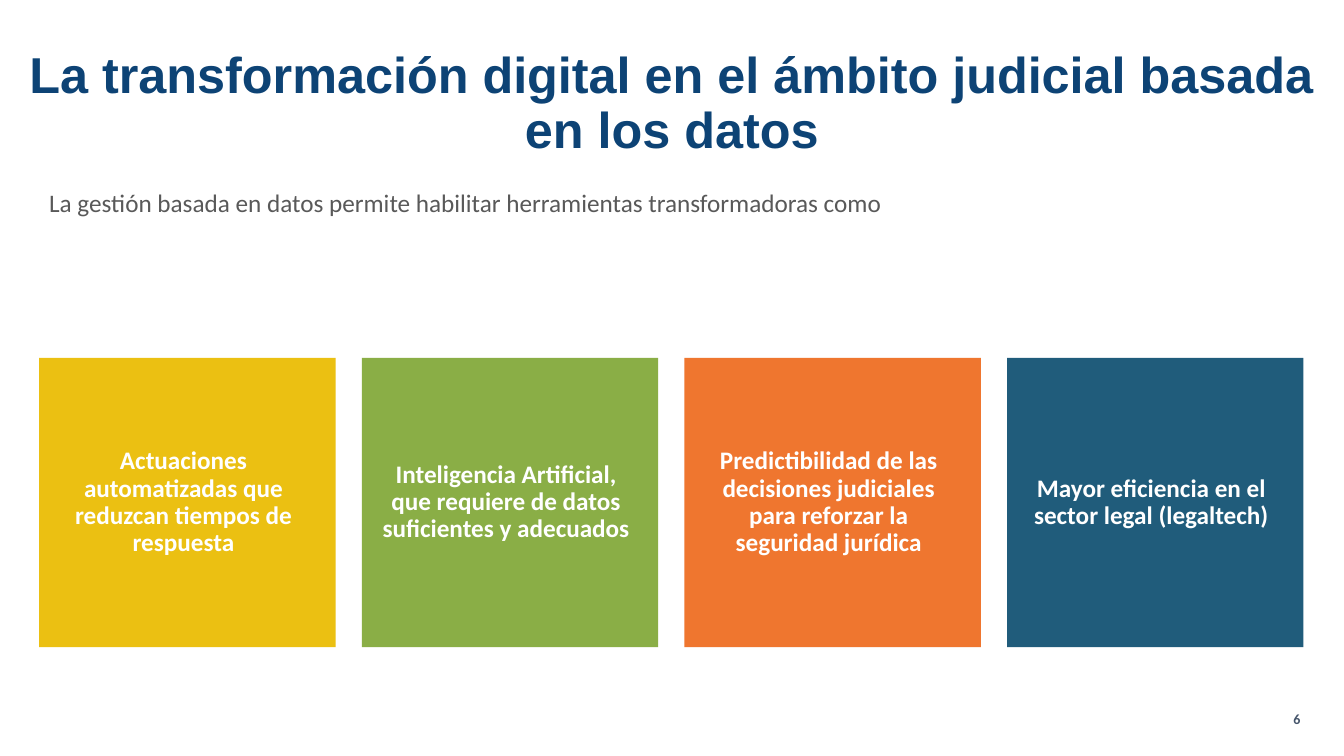
"""Build the slide on data-driven digital transformation in the courts."""
import pptx
import pptx.dml.color
import pptx.enum.shapes
import pptx.enum.text
import pptx.util

Cm = pptx.util.Cm
ALIGN = pptx.enum.text.PP_ALIGN
ANCHOR = pptx.enum.text.MSO_ANCHOR

CARD_LEFT, CARD_STEP = 0.99, 8.13
CARDS = [
    ("Actuaciones automatizadas que reduzcan tiempos de respuesta", "EBC012"),
    ("Inteligencia Artificial, que requiere de datos suficientes y adecuados", "8AAE46"),
    ("Predictibilidad de las decisiones judiciales para reforzar la seguridad jurídica", "EF762F"),
    ("Mayor eficiencia en el sector legal (legaltech)", "205C7B"),
]


def color(value):
    return pptx.dml.color.RGBColor.from_string(value)


def write(frame, text, size=18, font="Calibri", ink="FFFFFF", bold=False,
          align=ALIGN.LEFT, anchor=ANCHOR.TOP, spacing=0.9):
    frame.word_wrap = True
    frame.vertical_anchor = anchor
    paragraph = frame.paragraphs[0]
    paragraph.alignment = align
    paragraph.line_spacing = spacing
    run = paragraph.add_run()
    run.text = text
    run.font.size = pptx.util.Pt(size)
    run.font.name = font
    run.font.bold = bold
    run.font.color.rgb = color(ink)


class SlideBuilder:
    def __init__(self, slide):
        self.slide = slide
        self.card_size = (Cm(7.47), Cm(7.29))
        self.card_insets = (Cm(0.4), Cm(0.6), Cm(0.6), Cm(0.6))

    def text(self, left, top, width, height, text, **style):
        box = self.slide.shapes.add_textbox(Cm(left), Cm(top), Cm(width), Cm(height))
        write(box.text_frame, text, **style)

    def card(self, left, top, text, fill):
        shape = self.slide.shapes.add_shape(
            pptx.enum.shapes.MSO_SHAPE.RECTANGLE, Cm(left), Cm(top), *self.card_size)
        shape.shadow.inherit = False
        shape.fill.solid()
        shape.fill.fore_color.rgb = color(fill)
        shape.line.fill.background()
        frame = shape.text_frame
        (frame.margin_left, frame.margin_top,
         frame.margin_right, frame.margin_bottom) = self.card_insets
        write(frame, text, bold=True, align=ALIGN.CENTER, anchor=ANCHOR.MIDDLE)


def main():
    presentation = pptx.Presentation()
    presentation.slide_width = Cm(33.87)
    presentation.slide_height = Cm(19.05)
    slide = presentation.slides.add_slide(presentation.slide_layouts[6])
    builder = SlideBuilder(slide)
    builder.text(0, 1.14, 33.87, 1.83,
                 "La transformación digital en el ámbito judicial basada en los datos",
                 size=36, font="Arial", ink="0D4375", bold=True, align=ALIGN.CENTER)
    builder.text(0.99, 4.67, 32.87, 1.24,
                 "La gestión basada en datos permite habilitar herramientas transformadoras como",
                 ink="595959")
    for index, (text, fill) in enumerate(CARDS):
        builder.card(CARD_LEFT + index * CARD_STEP, 9.02, text, fill)
    builder.text(31.78, 17.78, 1.24, 0.69, "6",
                 size=10, ink="44546A", bold=True, align=ALIGN.RIGHT, spacing=1.0)
    presentation.save("out.pptx")


if __name__ == "__main__":
    main()
